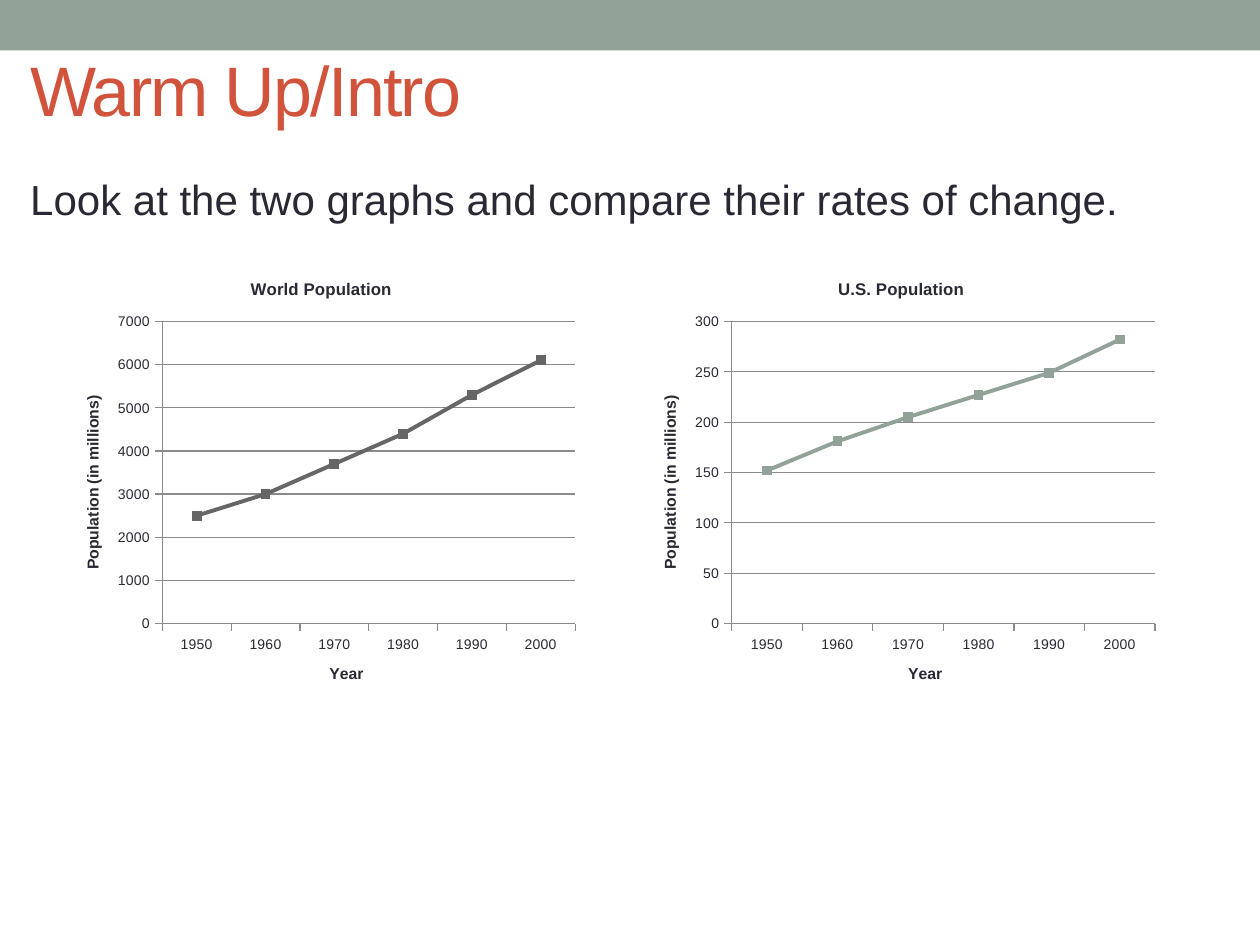
from lxml.etree import SubElement
from pptx import Presentation
from pptx.chart.data import CategoryChartData
from pptx.dml.color import RGBColor
from pptx.enum.chart import XL_CHART_TYPE, XL_MARKER_STYLE, XL_TICK_MARK
from pptx.enum.shapes import MSO_SHAPE
from pptx.enum.text import MSO_ANCHOR
from pptx.oxml.ns import qn
from pptx.util import Cm, Pt

COLORS = {"sage": "93A299", "red": "D2533C", "ink": "292934",
          "gray": "666666", "grid": "8B8B8B"}
FONT = "Arial"
YEARS = ["1950", "1960", "1970", "1980", "1990", "2000"]


def rgb(name):
    return RGBColor.from_string(COLORS[name])


class WarmUpSlide:
    """Holds the style and the current slide."""

    def __init__(self, deck):
        self.slide = deck.slides.add_slide(deck.slide_layouts[6])

    def style_font(self, font, size, color="ink", bold=False):
        values = {"name": FONT, "size": Pt(size), "bold": bold}
        for attribute, value in values.items():
            setattr(font, attribute, value)
        font.color.rgb = rgb(color)

    def band(self, left, top, width, height, color):
        strip = self.slide.shapes.add_shape(
            MSO_SHAPE.RECTANGLE, Cm(left), Cm(top), Cm(width), Cm(height))
        strip.shadow.inherit = False
        strip.fill.solid()
        strip.fill.fore_color.rgb = rgb(color)
        strip.line.fill.background()

    def text(self, wording, left, top, width, height, size, color,
             anchor=MSO_ANCHOR.TOP, spacing=0, before=0):
        frame = self.slide.shapes.add_textbox(
            Cm(left), Cm(top), Cm(width), Cm(height)).text_frame
        frame.word_wrap = True
        frame.vertical_anchor = anchor
        paragraph = frame.paragraphs[0]
        paragraph.space_before = Pt(before)
        run = paragraph.add_run()
        run.text = wording
        self.style_font(run.font, size, color)
        if spacing:
            run.font._element.set("spc", str(spacing * 100))

    def chart_heading(self, owner, wording, size):
        frame = owner.text_frame
        frame.text = wording
        self.style_font(frame.paragraphs[0].runs[0].font, size, bold=True)

    def place_plot(self, chart, x, y, w, h):
        """Fix the inner plot area as fractions of the chart."""
        area = chart._chartSpace.chart.plotArea
        for old in area.findall(qn("c:layout")):
            area.remove(old)
        layout = area.makeelement(qn("c:layout"))
        area.insert(0, layout)
        manual = SubElement(layout, qn("c:manualLayout"))
        settings = {"layoutTarget": "inner", "xMode": "edge", "yMode": "edge",
                    "x": x, "y": y, "w": w, "h": h}
        for tag, value in settings.items():
            SubElement(manual, qn(f"c:{tag}")).set("val", str(value))

    def line_chart(self, heading, values, left, color, top_value, step, plot_x):
        population = CategoryChartData()
        population.categories = YEARS
        population.add_series("Series 1", values)
        chart = self.slide.shapes.add_chart(
            XL_CHART_TYPE.LINE_MARKERS, Cm(left), Cm(5.21), Cm(10.67), Cm(9.09),
            population).chart
        self.style_font(chart.font, 8)
        chart.has_legend = False
        chart.has_title = True
        chart.chart_title.include_in_layout = False
        self.chart_heading(chart.chart_title, heading, 9.6)

        # Axes
        for axis, label in ((chart.category_axis, "Year"),
                            (chart.value_axis, "Population (in millions)")):
            axis.major_tick_mark = XL_TICK_MARK.OUTSIDE
            axis.format.line.color.rgb = rgb("grid")
            axis.format.line.width = Pt(0.75)
            self.chart_heading(axis.axis_title, label, 9)
        scale = {"minimum_scale": 0, "maximum_scale": top_value,
                 "major_unit": step, "has_major_gridlines": True}
        for attribute, value in scale.items():
            setattr(chart.value_axis, attribute, value)
        grid = chart.value_axis.major_gridlines.format.line
        grid.color.rgb = rgb("grid")
        grid.width = Pt(0.75)

        # Population line
        chart.plots[0].vary_by_categories = False
        trend = chart.plots[0].series[0]
        trend.smooth = False
        trend.format.line.color.rgb = rgb(color)
        trend.format.line.width = Pt(2.25)
        trend.marker.style = XL_MARKER_STYLE.SQUARE
        trend.marker.size = 5
        trend.marker.format.fill.solid()
        trend.marker.format.fill.fore_color.rgb = rgb(color)
        trend.marker.format.line.color.rgb = rgb(color)
        self.place_plot(chart, plot_x, 0.14, round(0.98 - plot_x, 2), 0.67)


def main():
    deck = Presentation()
    deck.slide_width, deck.slide_height = Cm(25.4), Cm(19.05)
    page = WarmUpSlide(deck)

    # Top band, title and task
    page.band(0, 0, 25.4, 1.02, "sage")
    page.text("Warm Up/Intro", 0.36, 0.41, 24.41, 2.74, 40, "red",
              anchor=MSO_ANCHOR.MIDDLE, spacing=-1)
    page.text("Look at the two graphs and compare their rates of change.",
              0.36, 3.38, 24.41, 2.26, 24, "ink", before=4.8)

    # The two graphs
    page.line_chart("World Population", [2500, 3000, 3700, 4400, 5300, 6100],
                    1.14, "gray", 7000, 1000, 0.2)
    page.line_chart("U.S. Population", [152, 181, 205, 227, 249, 282],
                    12.83, "sage", 300, 50, 0.18)

    deck.save("out.pptx")


if __name__ == "__main__":
    main()
